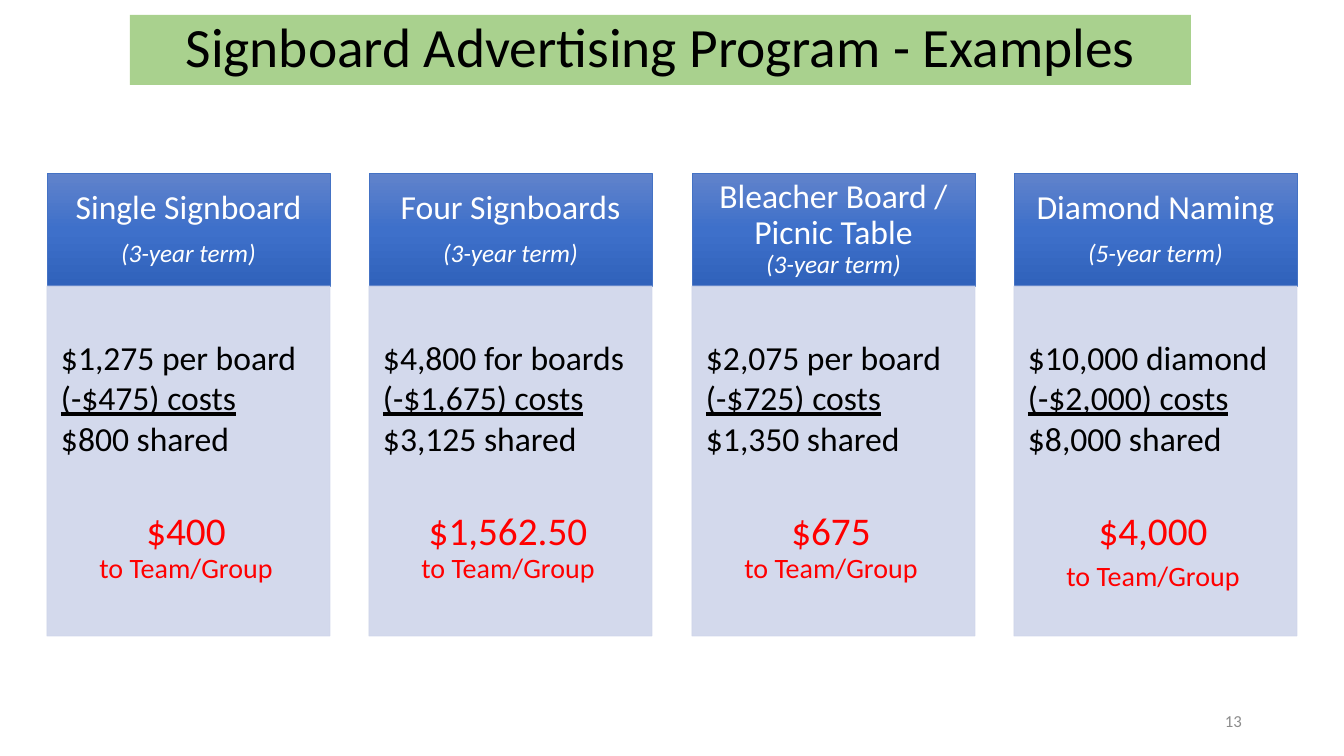
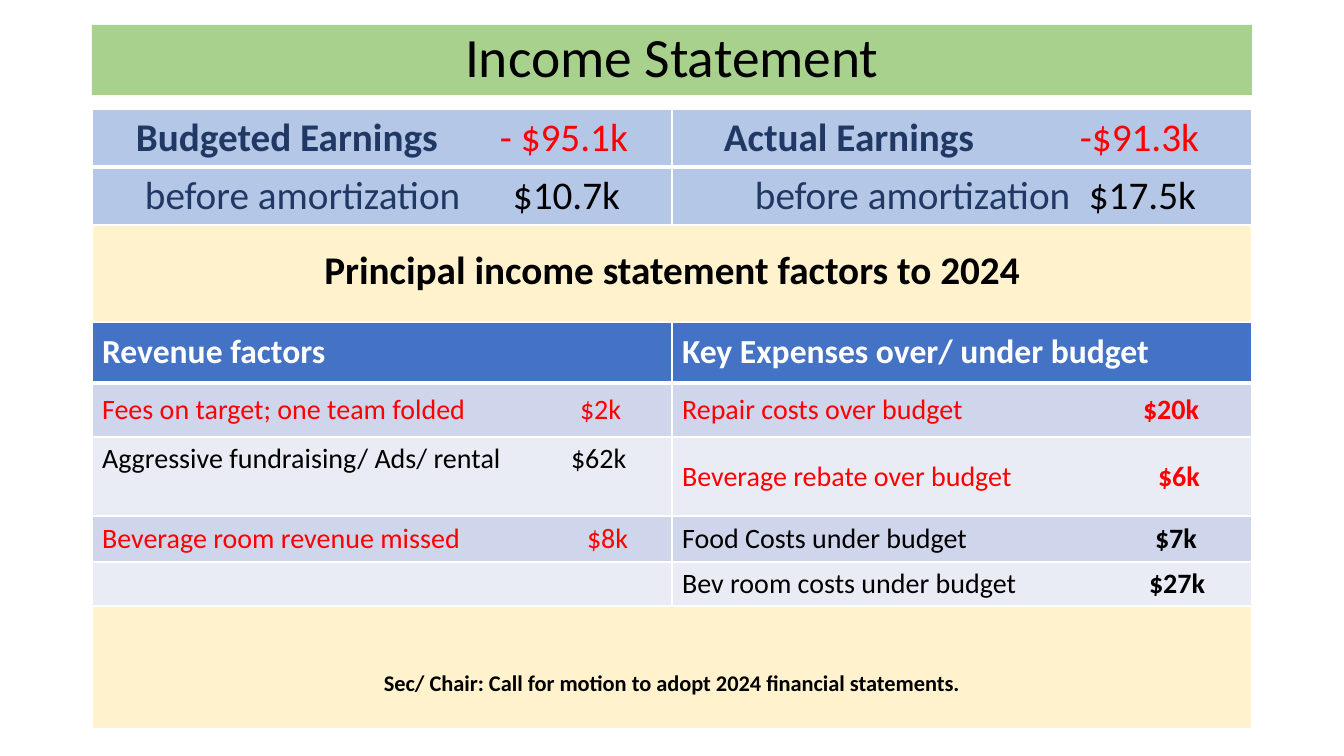
"""Build two slides: signboard advertising examples and an income statement."""
from copy import deepcopy

from lxml.etree import SubElement
from pptx import Presentation
from pptx.dml.color import RGBColor
from pptx.enum.shapes import MSO_SHAPE as Shape
from pptx.enum.text import MSO_ANCHOR as Anchor, PP_ALIGN as Align
from pptx.oxml.ns import qn
from pptx.util import Pt

EMU_PER_PX = 914400 / 100.8
FONT = "Calibri"
COLORS = {
    "title_band": "A9D18E", "black": "000000", "white": "FFFFFF", "red": "FF0000",
    "page_number": "8C8C8C", "blue": "4472C4", "pale_blue": "CFD5EA",
    "paler_blue": "E9EBF5", "earnings": "B4C7E7", "navy": "203864", "cream": "FFF2CC",
}
HEADER_GRADIENT = ((0, "6183CB"), (0.5, "3E70CA"), (1, "3062BB"))
CARDS = (
    ("Single Signboard", "(3-year term)", 10,
     ("$1,275 per board", "(-$475) costs", "$800 shared"), "$400", 0),
    ("Four Signboards", "(3-year term)", 10,
     ("$4,800 for boards", "(-$1,675) costs", "$3,125 shared"), "$1,562.50", 0),
    ("Bleacher Board / Picnic Table", "(3-year term)", 0,
     ("$2,075 per board", "(-$725) costs", "$1,350 shared"), "$675", 0),
    ("Diamond Naming", "(5-year term)", 10,
     ("$10,000 diamond", "(-$2,000) costs", "$8,000 shared"), "$4,000", 6),
)
EARNINGS = (
    (("Budgeted Earnings", 44, "- $95.1k", 364), ("Actual Earnings", 52, "-$91.3k", 356)),
    (("before amortization", 53, "$10.7k", 368), ("before amortization", 83, "$17.5k", 334)),
)
FACTORS = (
    (("Fees on target; one team folded", "$2k", 478, "red"),
     ("Repair costs over budget", "$20k", 461, "red")),
    (("Aggressive fundraising/ Ads/ rental", "$62k", 469, "black"),
     ("Beverage rebate over budget", "$6k", 476, "red")),
    (("Beverage room revenue missed", "$8k", 485, "red"),
     ("Food Costs under budget", "$7k", 473, "black")),
    (None, ("Bev room costs under budget", "$27k", 467, "black")),
)


def px(length):
    return round(length * EMU_PER_PX)


def rgb(name):
    return RGBColor.from_string(COLORS[name])


def write(frame, text, size, color="black", bold=False, italic=False, underline=False,
          align=Align.LEFT, spacing=None, before=None, after=None, tab=None, same_line=False):
    paragraph = frame.paragraphs[-1]
    if not same_line:
        if frame.text:
            paragraph = frame.add_paragraph()
        paragraph.alignment = align
        if spacing:
            paragraph.line_spacing = spacing
        if before is not None:
            paragraph.space_before = Pt(before)
        if after is not None:
            paragraph.space_after = Pt(after)
        if tab:
            stops = SubElement(paragraph._p.get_or_add_pPr(), qn("a:tabLst"))
            SubElement(stops, qn("a:tab"), pos=str(px(tab)), algn="l")
    run = paragraph.add_run()
    run.text = text
    font = run.font
    font.name, font.size, font.color.rgb = FONT, Pt(size), rgb(color)
    font.bold, font.italic, font.underline = bold, italic, underline


def add_panel(slide, box, color, outlined=False, insets=(10, 5, 10, 5), anchor=Anchor.MIDDLE):
    panel = slide.shapes.add_shape(Shape.RECTANGLE, *map(px, box))
    panel.shadow.inherit = False
    panel.fill.solid()
    panel.fill.fore_color.rgb = rgb(color)
    if outlined:
        panel.line.color.rgb = rgb(color)
        panel.line.width = Pt(0.5)
    else:
        panel.line.fill.background()
    set_frame(panel.text_frame, insets, anchor)
    return panel


def set_frame(frame, insets, anchor):
    frame.word_wrap = True
    frame.vertical_anchor = anchor
    (frame.margin_left, frame.margin_top,
     frame.margin_right, frame.margin_bottom) = map(px, insets)


def add_title(slide, text, box):
    band = add_panel(slide, box, "title_band")
    write(band.text_frame, text, 39.6, align=Align.CENTER, spacing=0.9)


def add_page_number(slide, number):
    box = slide.shapes.add_textbox(*map(px, (950, 701, 302, 40)))
    set_frame(box.text_frame, (10, 5, 10, 5), Anchor.MIDDLE)
    write(box.text_frame, number, 12, "page_number", align=Align.RIGHT)


def apply_gradient(panel, stops):
    panel.fill.gradient()
    panel.fill.gradient_angle = 270
    stop_list = panel._element.spPr.find(".//" + qn("a:gsLst"))
    stop_list.insert(1, deepcopy(stop_list[0]))
    for stop, (position, color) in zip(panel.fill.gradient_stops, stops):
        stop.position = position
        stop.color.rgb = RGBColor.from_string(color)


def set_opacity(panel, percent):
    for color in panel._element.spPr.iter(qn("a:srgbClr")):
        SubElement(color, qn("a:alpha"), val=str(percent * 1000))


def add_card(slide, left, name, term, name_gap, lines, share, share_gap):
    header = add_panel(slide, (left, 173, 283, 113), "blue", True, (19, 11, 19, 11))
    apply_gradient(header, HEADER_GRADIENT)
    heading = {"color": "white", "align": Align.CENTER, "spacing": 0.9}
    write(header.text_frame, name, 24, after=name_gap, **heading)
    write(header.text_frame, term, 18, italic=True, **heading)

    body = add_panel(slide, (left, 286, 283, 350), "pale_blue", True,
                     (14, 55, 19, 21), Anchor.TOP)
    set_opacity(body, 90)
    for index, line in enumerate(lines):
        write(body.text_frame, line, 24, underline=index == 1, spacing=0.9, after=3)
    payout = {"color": "red", "align": Align.CENTER, "spacing": 0.9}
    write(body.text_frame, share, 28, before=35, after=share_gap, **payout)
    write(body.text_frame, "to Team/Group", 20, **payout)


def add_grid(slide, top, row_heights):
    frame = slide.shapes.add_table(len(row_heights), 2, px(92), px(top),
                                   px(1160), px(sum(row_heights)))
    grid = frame.table
    grid.first_row = grid.horz_banding = False
    for row, height in zip(grid.rows, row_heights):
        row.height = px(height)
    return grid


def style_cell(grid, row, column, color, anchor=Anchor.MIDDLE):
    cell = grid.cell(row, column)
    cell.vertical_anchor = anchor
    properties = cell._tc.get_or_add_tcPr()
    widths = {"L": 1, "R": 1, "T": 3 if row == 1 else 1, "B": 3 if row == 0 else 1}
    for side, width in widths.items():
        border = SubElement(properties, qn(f"a:ln{side}"), w=str(Pt(width)))
        paint = SubElement(border, qn("a:solidFill"))
        SubElement(paint, qn("a:srgbClr"), val=COLORS["white"])
    cell.fill.solid()
    cell.fill.fore_color.rgb = rgb(color)
    return cell


def add_earnings(slide):
    grid = add_grid(slide, 109, (58, 58, 236, 268))
    for row, entries in enumerate(EARNINGS):
        for column, (label, indent, amount, tab) in enumerate(entries):
            cell = style_cell(grid, row, column, "earnings")
            cell.margin_left, cell.margin_right = px(indent), 0
            write(cell.text_frame, label, 28, "navy", bold=row == 0, tab=tab)
            write(cell.text_frame, "\t" + amount, 28, "black" if row else "red",
                  same_line=True)
    notes = (("Principal income statement factors to 2024", 28, Anchor.TOP),
             ("Sec/ Chair: Call for motion to adopt 2024 financial statements.", 16,
              Anchor.BOTTOM))
    for row, (note, size, anchor) in enumerate(notes, 2):
        grid.cell(row, 0).merge(grid.cell(row, 1))
        cell = style_cell(grid, row, 0, "cream", anchor)
        cell.margin_top, cell.margin_bottom = px(22), px(31)
        write(cell.text_frame, note, size, bold=True, align=Align.CENTER)


def add_factors(slide):
    grid = add_grid(slide, 322, (61, 54, 79, 46, 44))
    for column, heading in enumerate(("Revenue factors", "Key Expenses over/ under budget")):
        cell = style_cell(grid, 0, column, "blue")
        write(cell.text_frame, heading, 24, "white", bold=True)
    for row, entries in enumerate(FACTORS, 1):
        for column, entry in enumerate(entries):
            raised = (row, column) == (2, 0)
            cell = style_cell(grid, row, column, "pale_blue" if row % 2 else "paler_blue",
                              Anchor.TOP if raised else Anchor.MIDDLE)
            if entry:
                label, amount, tab, color = entry
                write(cell.text_frame, label, 20, color, tab=tab)
                write(cell.text_frame, "\t" + amount, 20, color, bold=column == 1,
                      same_line=True)


def main():
    deck = Presentation()
    deck.slide_width, deck.slide_height = px(1344), px(756)
    blank = deck.slide_layouts[6]

    examples = deck.slides.add_slide(blank)
    add_title(examples, "Signboard Advertising Program - Examples", (130, 15, 1061, 70))
    add_page_number(examples, "13")
    for index, card in enumerate(CARDS):
        add_card(examples, 47 + round(index * 322.4), *card)

    statement = deck.slides.add_slide(blank)
    add_title(statement, "Income Statement", (92, 25, 1160, 70))
    add_earnings(statement)
    add_factors(statement)

    deck.save("out.pptx")


if __name__ == "__main__":
    main()
